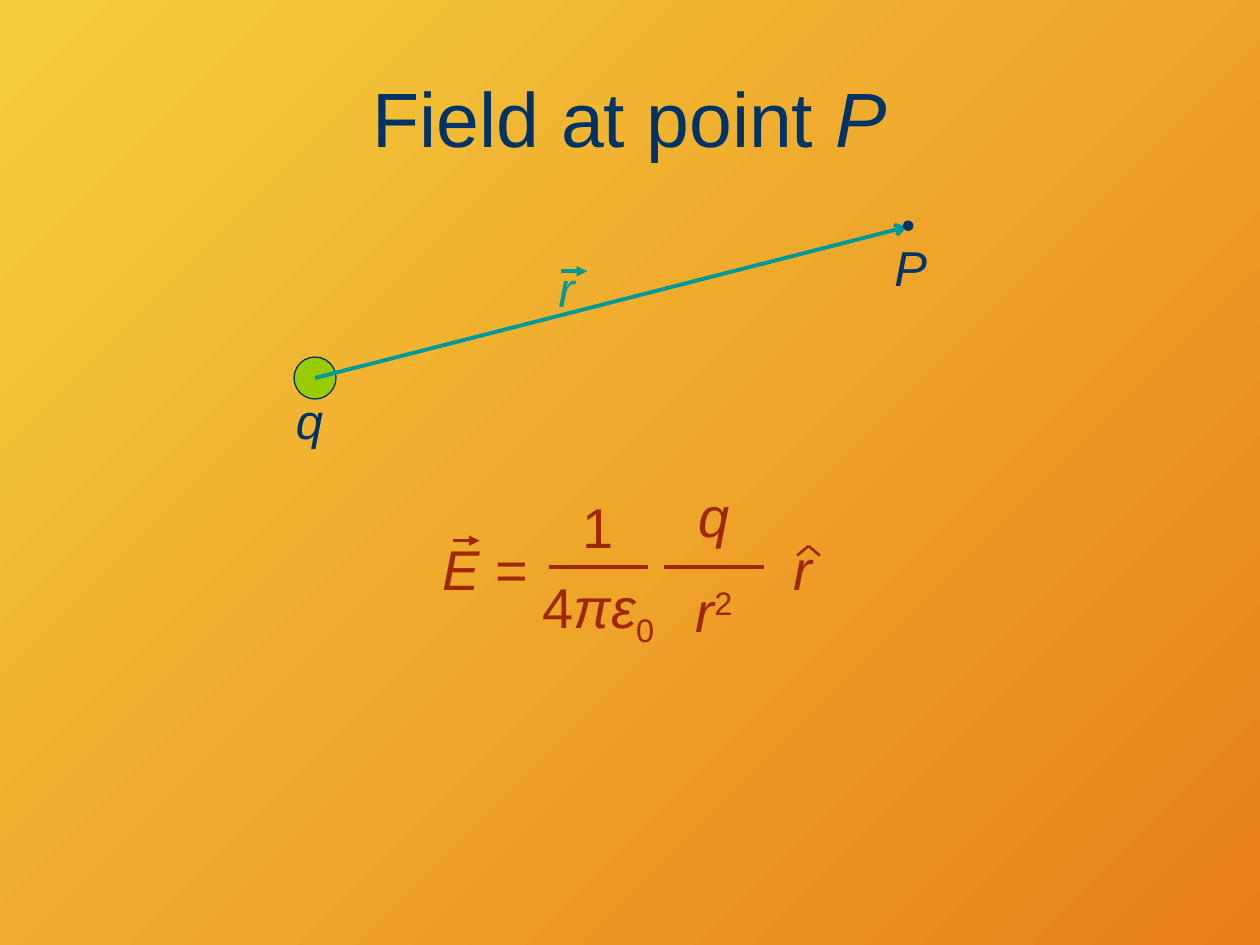
from pptx import Presentation
from pptx.dml.color import RGBColor
from pptx.enum import shapes, text
from pptx.oxml.xmlchemy import OxmlElement
from pptx.util import Pt

NAVY = RGBColor(0x00, 0x33, 0x66)
RUST = RGBColor(0x9E, 0x28, 0x00)
TEAL = RGBColor(0x00, 0x99, 0x99)
GREEN = RGBColor(0x99, 0xCC, 0x00)
YELLOW = RGBColor(0xF5, 0xCE, 0x3D)
ORANGE = RGBColor(0xE8, 0x80, 0x18)
LEFT, CENTER = text.PP_ALIGN.LEFT, text.PP_ALIGN.CENTER


def write(tf, runs, size, color, align=LEFT):
    p = tf.paragraphs[0]
    p.alignment = align
    p.font.name, p.font.size = "Arial", Pt(size)
    p.font.color.rgb = color
    for content, italic, baseline in runs:
        r = p.add_run()
        r.text = content
        r.font.italic = italic
        if baseline:
            r._r.get_or_add_rPr().set("baseline", str(baseline * 1000))
    return p


def add_line(parent, x1, y1, x2, y2, color, width, head=None):
    sp = parent.add_connector(shapes.MSO_CONNECTOR.STRAIGHT, Pt(x1), Pt(y1), Pt(x2), Pt(y2))
    sp.line.color.rgb = color
    sp.line.width = Pt(width)
    if head:
        tail = OxmlElement("a:tailEnd")
        tail.set("type", head)
        sp.line._get_or_add_ln().append(tail)
    sp._element.spPr.append(OxmlElement("a:effectLst"))


prs = Presentation()
prs.slide_width, prs.slide_height = Pt(720), Pt(540)
s = prs.slides.add_slide(prs.slide_layouts[5])
fill = s.background.fill
fill.gradient()
fill.gradient_angle = 315
for stop, color, position in zip(fill.gradient_stops, (YELLOW, ORANGE), (0, 1)):
    stop.color.rgb = color
    stop.position = position

title = s.shapes.title
title.left, title.top, title.width, title.height = Pt(36), Pt(21.6), Pt(648), Pt(90)
title.text_frame.vertical_anchor = text.MSO_ANCHOR.MIDDLE
write(title.text_frame, [("Field at point ", False, 0), ("P", True, 0)], 44, NAVY, CENTER)

equation = s.shapes.add_group_shape().shapes
for x, y, w, h, align, runs in [
    (372, 276, 72, 48, CENTER, [("q", True, 0)]),
    (384, 330, 48, 42, CENTER, [("r", True, 0), ("2", False, 30)]),
    (444, 306, 30, 36, CENTER, [("r", True, 0)]),
    (300, 324, 84, 48, CENTER, [("4", False, 0), ("πε", True, 0), ("0", False, -25)]),
    (324, 282, 36, 36, CENTER, [("1", False, 0)]),
    (246, 306, 66, 42, LEFT, [("E ", True, 0), ("=", False, 0)]),
]:
    tf = equation.add_textbox(Pt(x), Pt(y), Pt(w), Pt(h)).text_frame
    tf.word_wrap = True
    p = write(tf, runs, 32, RUST, align)
    p.line_spacing = 0.9
    p.space_before = Pt(3)
for x in (313.5, 379.5):
    add_line(equation, x, 324, x + 57, 324, RUST, 2.25)
for x in (455.5, 468.5):
    add_line(equation, x, 317.5, 462, 312, RUST, 1.5)
add_line(equation, 259, 309, 274, 309, RUST, 2, "triangle")

charge = s.shapes.add_shape(shapes.MSO_SHAPE.OVAL, Pt(168), Pt(204), Pt(24), Pt(24))
charge.shadow.inherit = False
charge.fill.solid()
charge.fill.fore_color.rgb = GREEN
charge.line.color.rgb = NAVY
charge.line.width = Pt(0.75)

add_line(s.shapes, 180, 216, 518.4, 129.6, TEAL, 2.25, "arrow")

vector = s.shapes.add_group_shape().shapes
for parent, name, x, y, w, color, wrap in [
    (s.shapes, "q", 162, 219.6, 30, NAVY, False),
    (s.shapes, "P", 504, 132, 42, NAVY, True),
    (vector, "r", 312, 144, 24, TEAL, True),
]:
    tf = parent.add_textbox(Pt(x), Pt(y), Pt(w), Pt(41)).text_frame
    tf.word_wrap = wrap
    tf.auto_size = text.MSO_AUTO_SIZE.SHAPE_TO_FIT_TEXT
    write(tf, [(name, True, 0)], 28, color)
add_line(vector, 320.5, 155, 335.5, 155, TEAL, 2, "triangle")

point = s.shapes.add_shape(shapes.MSO_SHAPE.OVAL, Pt(516), Pt(126), Pt(6), Pt(6))
point.shadow.inherit = False
point.fill.solid()
point.fill.fore_color.rgb = NAVY
point.line.fill.background()

prs.save("out.pptx")
